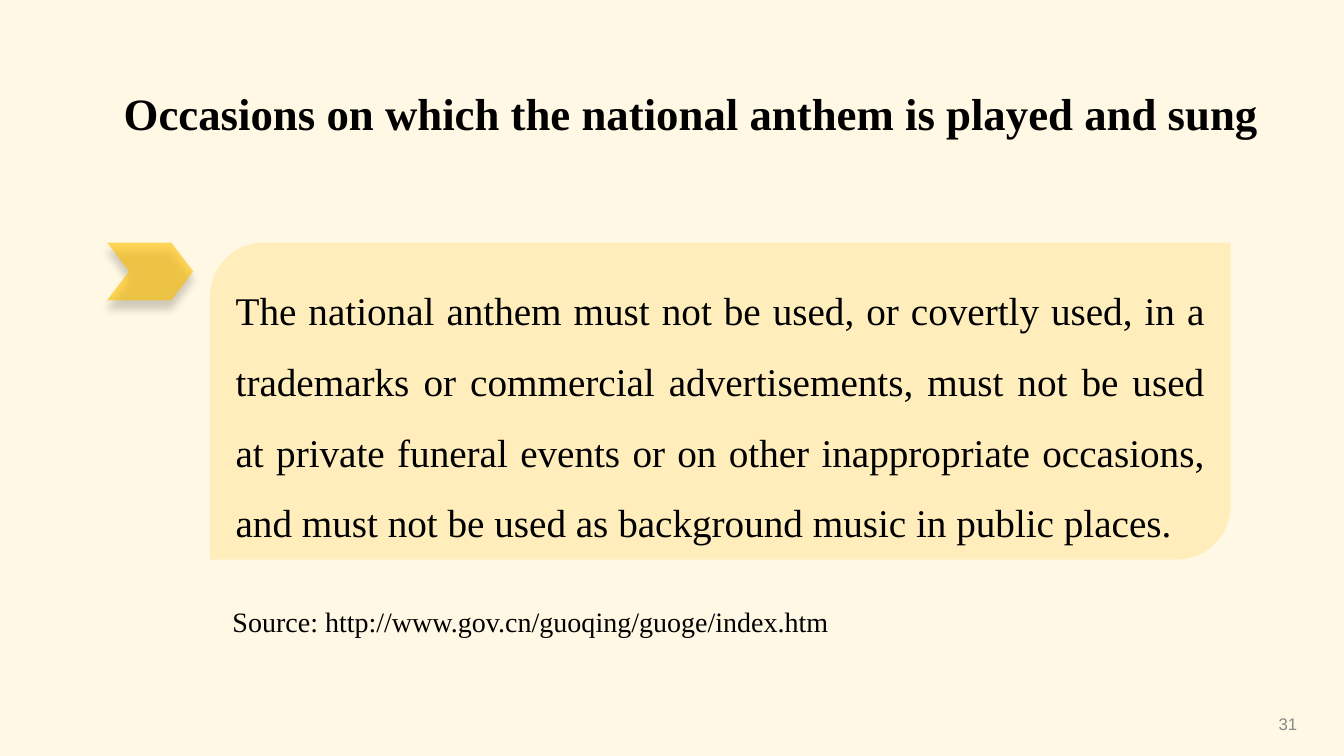
from dataclasses import dataclass

from lxml.etree import SubElement
from pptx import Presentation
from pptx.dml.color import RGBColor
from pptx.enum.shapes import MSO_SHAPE
from pptx.enum.text import MSO_ANCHOR, PP_ALIGN
from pptx.oxml.ns import qn
from pptx.shapes.autoshape import Shape
from pptx.slide import Slide
from pptx.util import Pt

EMU_PER_PX = 9525


@dataclass(frozen=True)
class Theme:
    background: str = "FFF8E5"
    accent: str = "FFC000"
    text: str = "000000"
    muted: str = "898989"
    shadow: str = "000000"
    serif: str = "Times New Roman"
    sans: str = "Arial"
    title_size: int = 32
    body_size: int = 28
    source_size: int = 20
    number_size: int = 12


THEME = Theme()


@dataclass(frozen=True)
class Box:
    left: int
    top: int
    width: int
    height: int

    def emu(self) -> list[int]:
        return [px(side) for side in (self.left, self.top, self.width, self.height)]


@dataclass(frozen=True)
class TextStyle:
    size: int
    font: str = THEME.serif
    color: str = THEME.text
    bold: bool = False
    alignment: PP_ALIGN = PP_ALIGN.LEFT
    line_spacing: float = 1.0
    anchor: MSO_ANCHOR = MSO_ANCHOR.TOP
    wrap: bool = True


@dataclass(frozen=True)
class Label:
    box: Box
    text: str
    style: TextStyle


@dataclass(frozen=True)
class Panel:
    kind: MSO_SHAPE
    box: Box
    opacity: int
    adjustment: float


LABELS = (
    Label(
        Box(957, 670, 288, 38),
        "31",
        TextStyle(THEME.number_size, THEME.sans, THEME.muted,
                  alignment=PP_ALIGN.RIGHT, anchor=MSO_ANCHOR.MIDDLE),
    ),
    Label(
        Box(212, 577, 598, 35),
        "Source: http://www.gov.cn/guoqing/guoge/index.htm",
        TextStyle(THEME.source_size, line_spacing=0.8, wrap=False),
    ),
    Label(
        Box(102, 83, 1113, 125),
        "Occasions on which the national anthem is played and sung",
        TextStyle(THEME.title_size, bold=True, alignment=PP_ALIGN.CENTER, line_spacing=0.9),
    ),
)
CHEVRON = Panel(MSO_SHAPE.CHEVRON, Box(102, 231, 82, 55), 62, 0.38)
RULE_PANEL = Panel(MSO_SHAPE.ROUND_2_DIAG_RECTANGLE, Box(200, 231, 972, 302), 18, 0.17)
RULE_TEXT = (
    "The national anthem must not be used, or covertly used, in a trademarks or "
    "commercial advertisements, must not be used at private funeral events or on other "
    "inappropriate occasions, and must not be used as background music in public places."
)
RULE_STYLE = TextStyle(THEME.body_size, alignment=PP_ALIGN.JUSTIFY, line_spacing=1.5)


def px(length: int) -> int:
    return length * EMU_PER_PX


def apply(target: object, values: dict[str, object]) -> None:
    for name, value in values.items():
        setattr(target, name, value)


def write_text(shape: Shape, text: str, style: TextStyle) -> None:
    frame = shape.text_frame
    apply(frame, {"word_wrap": style.wrap, "vertical_anchor": style.anchor})
    paragraph = frame.paragraphs[0]
    apply(paragraph, {"alignment": style.alignment, "line_spacing": style.line_spacing})
    run = paragraph.add_run()
    run.text = text
    apply(run.font, {"size": Pt(style.size), "name": style.font, "bold": style.bold})
    run.font.color.rgb = RGBColor.from_string(style.color)


def add_label(slide: Slide, label: Label) -> None:
    write_text(slide.shapes.add_textbox(*label.box.emu()), label.text, label.style)


def set_opacity(color: object, percent: int) -> None:
    SubElement(color, qn("a:alpha"), val=str(percent * 1000))


def add_panel(slide: Slide, panel: Panel) -> Shape:
    shape = slide.shapes.add_shape(panel.kind, *panel.box.emu())
    shape.shadow.inherit = False
    shape.adjustments[0] = panel.adjustment
    shape.fill.solid()
    shape.fill.fore_color.rgb = RGBColor.from_string(THEME.accent)
    shape.line.fill.background()
    set_opacity(shape.element.spPr.find(qn("a:solidFill"))[0], panel.opacity)
    return shape


def add_drop_shadow(shape: Shape) -> None:
    effects = shape.element.spPr.find(qn("a:effectLst"))
    shadow = SubElement(effects, qn("a:outerShdw"), blurRad=str(Pt(6)), dist=str(Pt(6)),
                        dir="5400000", algn="ctr", rotWithShape="0")
    set_opacity(SubElement(shadow, qn("a:srgbClr"), val=THEME.shadow), 30)


def main() -> None:
    presentation = Presentation()
    apply(presentation, {"slide_width": px(1280), "slide_height": px(720)})
    slide = presentation.slides.add_slide(presentation.slide_layouts[6])
    slide.background.fill.solid()
    slide.background.fill.fore_color.rgb = RGBColor.from_string(THEME.background)
    add_drop_shadow(add_panel(slide, CHEVRON))
    write_text(add_panel(slide, RULE_PANEL), RULE_TEXT, RULE_STYLE)
    for label in LABELS:
        add_label(slide, label)
    presentation.save("out.pptx")


if __name__ == "__main__":
    main()
